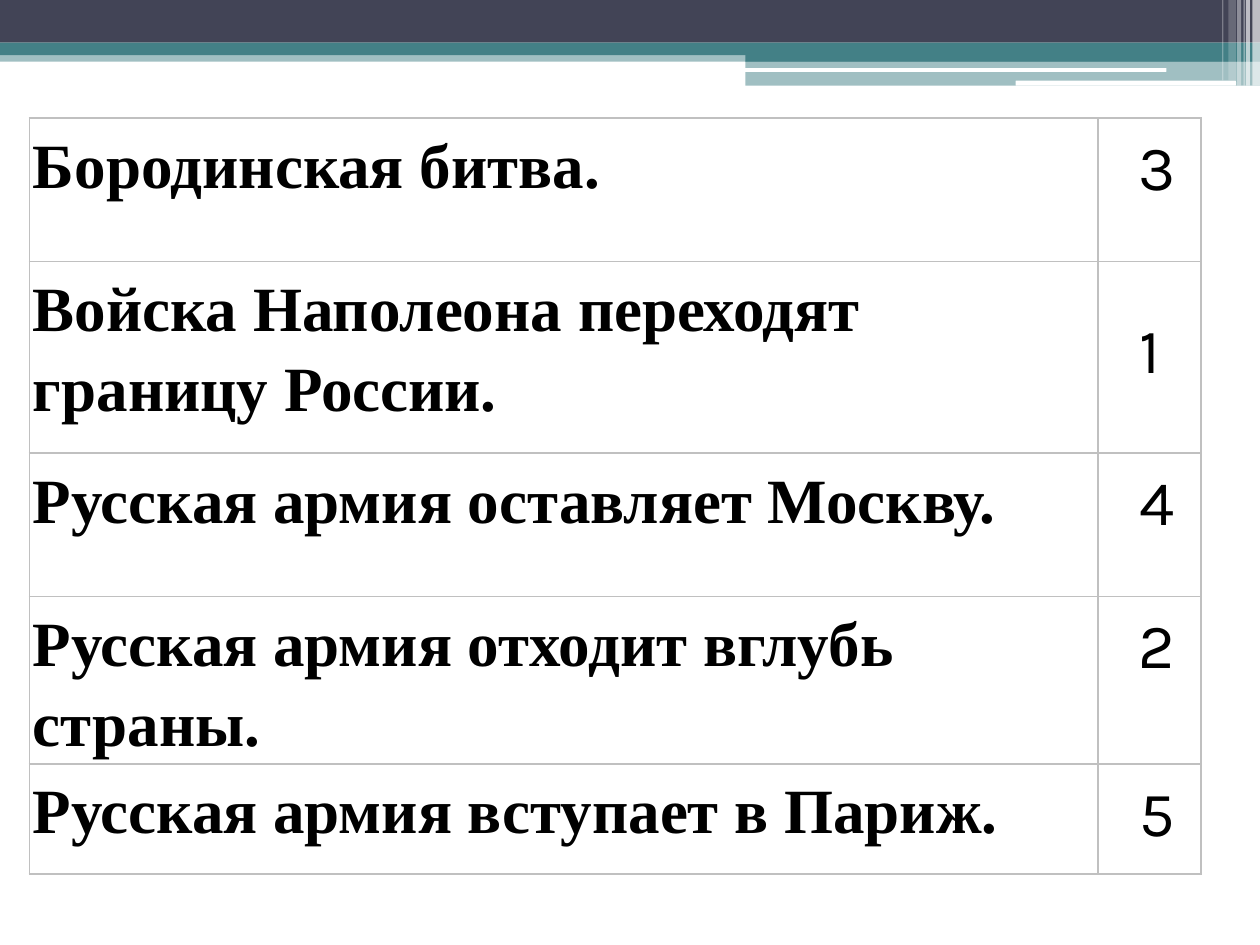
from dataclasses import dataclass

from lxml.etree import SubElement
from pptx import Presentation
from pptx.dml.color import RGBColor
from pptx.enum.shapes import MSO_SHAPE
from pptx.enum.text import PP_ALIGN
from pptx.oxml.ns import qn
from pptx.util import Pt


@dataclass(frozen=True)
class Theme:
    slate: str = "424456"
    teal: str = "438086"
    white: str = "FFFFFF"
    black: str = "000000"
    grid: str = "C0C0C0"
    event_font: str = "Times New Roman"
    number_font: str = "Karla"
    text_size: int = 36


THEME = Theme()

# Left, top, width, height, colour, opacity in percent
BANDS = [
    (0, 28.8, 720, 6.5, THEME.teal, 50),
    (0, 0, 720, 24.4, THEME.slate, 100),
    (0, 24.4, 720, 7.2, THEME.teal, 100),
    (426, 28.3, 294, 7, THEME.teal, 100),
    (426, 34.7, 294, 14.2, THEME.teal, 50),
]
WHITE_BARS = [(425.6, 38.9, 241, 2.2), (580.3, 46.1, 126, 2.9)]

# Left, width, height, opacity in percent
STRIPES = [
    (715.6, 4.4, 49, 65),
    (712, 2.2, 49, 65),
    (710.6, 0.7, 49, 60),
    (707, 2.2, 49, 40),
    (702, 4.3, 46, 20),
    (698.4, 0.7, 46, 30),
]

# Event, its number, row height, line spacing and top margin of the number
EVENTS = [
    ("Бородинская битва.", " 3", 82, 1.15, 2),
    ("Войска Наполеона переходят границу России.", "1", 109.5, 1, 31),
    ("Русская армия оставляет Москву.", " 4", 82, 1.15, 2),
    ("Русская армия отходит вглубь страны.", " 2", 82, 1.15, 2),
    ("Русская армия вступает в Париж.", " 5", 63, 1.15, 2),
]
COLUMN_WIDTHS = (610.5, 59)
CELL_MARGIN = 2


def add_bar(page, left, top, width, height, color, opacity=100,
            kind=MSO_SHAPE.RECTANGLE):
    bar = page.shapes.add_shape(kind, Pt(left), Pt(top), Pt(width), Pt(height))
    bar.shadow.inherit = False
    bar.line.fill.background()
    bar.fill.solid()
    bar.fill.fore_color.rgb = RGBColor.from_string(color)
    if opacity < 100:
        tint = bar.fill._xPr.find(".//" + qn("a:srgbClr"))
        SubElement(tint, qn("a:alpha"), val=str(opacity * 1000))
    return bar


def set_borders(cell):
    properties = cell._tc.get_or_add_tcPr()
    for position, side in enumerate(("a:lnL", "a:lnR", "a:lnT", "a:lnB")):
        line = SubElement(properties, qn(side), w=str(Pt(1)))
        fill = SubElement(line, qn("a:solidFill"))
        SubElement(fill, qn("a:srgbClr"), val=THEME.grid)
        properties.insert(position, line)


def fill_cell(cell, text, font, bold, align, spacing=1.15, top=CELL_MARGIN):
    cell.margin_left = cell.margin_right = cell.margin_bottom = Pt(CELL_MARGIN)
    cell.margin_top = Pt(top)
    cell.fill.background()
    set_borders(cell)
    cell.text_frame.text = text
    para = cell.text_frame.paragraphs[0]
    para.alignment = align
    para.line_spacing = spacing
    span = para.runs[0]
    span.font.name = font
    span.font.size = Pt(THEME.text_size)
    span.font.bold = bold
    span.font.color.rgb = RGBColor.from_string(THEME.black)


def add_event_table(page, left, top):
    height = sum(event[2] for event in EVENTS)
    frame = page.shapes.add_table(len(EVENTS), len(COLUMN_WIDTHS), Pt(left),
                                  Pt(top), Pt(sum(COLUMN_WIDTHS)), Pt(height))
    table = frame.table
    table.first_row = table.horz_banding = False
    for column, width in zip(table.columns, COLUMN_WIDTHS):
        column.width = Pt(width)
    for row, (event, number, row_height, spacing, margin) in zip(table.rows, EVENTS):
        row.height = Pt(row_height)
        event_cell, number_cell = row.cells
        fill_cell(event_cell, event, THEME.event_font, True, PP_ALIGN.LEFT)
        fill_cell(number_cell, number, THEME.number_font, False,
                  PP_ALIGN.CENTER, spacing, margin)


def main():
    deck = Presentation()
    deck.slide_width, deck.slide_height = Pt(720), Pt(540)
    page = deck.slides.add_slide(deck.slide_layouts[6])

    # Header decoration
    for band in BANDS:
        add_bar(page, *band)
    for bar in WHITE_BARS:
        add_bar(page, *bar, THEME.white, kind=MSO_SHAPE.ROUNDED_RECTANGLE)
    for left, width, height, opacity in STRIPES:
        add_bar(page, left, 0, width, height, THEME.white, opacity)

    # Events with their order
    add_event_table(page, 16.8, 67.5)

    deck.save("out.pptx")


if __name__ == "__main__":
    main()
